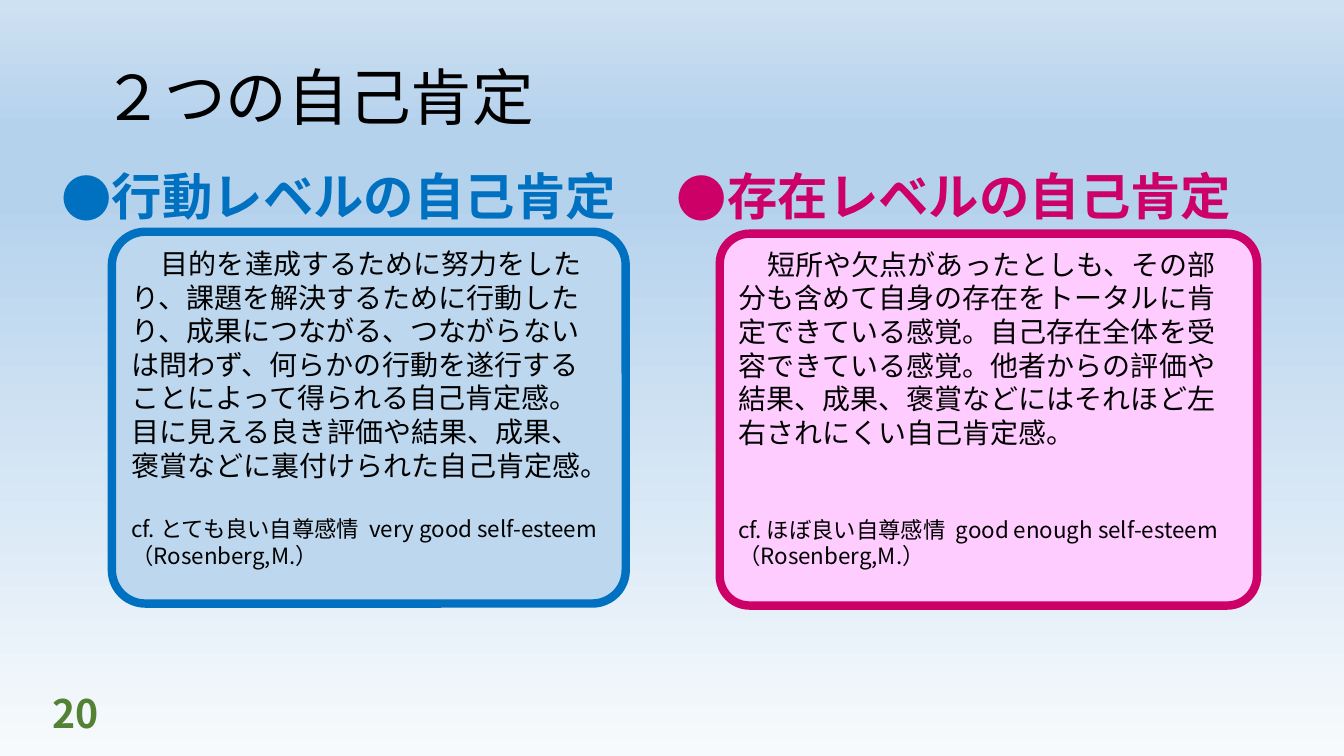
from copy import deepcopy

from lxml.etree import SubElement as Sub
from pptx import Presentation
from pptx.dml.color import RGBColor as Rgb
from pptx.enum.shapes import MSO_SHAPE as Kind
from pptx.enum.text import MSO_ANCHOR as Anchor, PP_ALIGN as Align
from pptx.oxml.ns import qn
from pptx.util import Cm, Pt

FONT = "Noto Sans CJK JP"


def tint(code):
    return Rgb.from_string(code)


def apply(item, form):
    for name, value in form.items():
        setattr(item, name, value)


class Deck:
    def __init__(self, wide, high):
        self.show = Presentation()
        apply(self.show, {"slide_width": Cm(wide), "slide_height": Cm(high)})
        self.page = self.show.slides.add_slide(self.show.slide_layouts[6])

    def back(self, stops, angle):
        fill = self.page.background.fill
        fill.gradient()
        fill.gradient_angle = angle
        group = next(self.page.element.iter(qn("a:gsLst")))
        for _ in stops[2:]:
            group.append(deepcopy(group[0]))
        for stop, (place, color) in zip(fill.gradient_stops, stops):
            stop.position = place
            stop.color.rgb = tint(color)

    def words(self, para, text, size, color="000000", bold=False, **form):
        run = para.add_run()
        run.text = text
        apply(run.font, {"name": FONT, "size": Pt(size), "bold": bold})
        run.font.color.rgb = tint(color)
        Sub(run.font._element, qn("a:ea"), typeface=FONT)
        apply(para, {"alignment": Align.LEFT, **form})

    def indent(self, para, left, first):
        props = para._p.get_or_add_pPr()
        props.set("marL", str(Cm(left)))
        props.set("indent", str(Cm(first)))
        return props

    def label(self, area, text, size, color, bold=False,
              anchor=Anchor.MIDDLE, bullet=False, **form):
        frame = self.page.shapes.add_textbox(*map(Cm, area)).text_frame
        apply(frame, {"word_wrap": True, "vertical_anchor": anchor})
        para = frame.paragraphs[0]
        if bullet:
            props = self.indent(para, 1.27, -1.27)
            Sub(props, qn("a:buFont"), typeface=FONT)
            Sub(props, qn("a:buChar"), char="●")
        self.words(para, text, size, color, bold, **form)

    def panel(self, area, curve, fill, edge, body, note, gap):
        box = self.page.shapes.add_shape(Kind.ROUNDED_RECTANGLE, *map(Cm, area))
        box.shadow.inherit = False
        box.adjustments[0] = curve
        box.fill.solid()
        box.fill.fore_color.rgb = tint(fill)
        box.line.color.rgb = tint(edge)
        box.line.width = Pt(6)
        frame = box.text_frame
        apply(frame, {"word_wrap": True, "vertical_anchor": Anchor.TOP})
        para = frame.paragraphs[0]
        self.indent(para, 0, 0.74)
        self.words(para, body, 20, line_spacing=Pt(24))
        self.words(frame.add_paragraph(), note, 16,
                   line_spacing=Pt(19), space_before=Pt(gap))


def main():
    deck = Deck(33.87, 19.05)
    deck.back([(0, "F7FAFD"), (0.74, "B5D2EC"), (0.83, "B5D2EC"),
               (1, "CEE1F2")], 90)
    deck.label((2.34, 1.02, 29.21, 3.02), "２つの自己肯定", 44, "000000",
               line_spacing=0.9)
    deck.label((1.07, 17.4, 7.62, 1.12), "20", 28, "548235", True)

    sides = [
        ("行動レベルの自己肯定", (1.3, 4.04, 14.78, 1.8), "0070C0", "BDD7EE",
         (2.82, 5.84, 12.95, 9.37), 0.09,
         "目的を達成するために努力をしたり、課題を解決するために行動したり、"
         "成果につながる、つながらないは問わず、何らかの行動を遂行することに"
         "よって得られる自己肯定感。目に見える良き評価や結果、成果、褒賞などに"
         "裏付けられた自己肯定感。",
         "cf. とても良い自尊感情  very good self-esteem（Rosenberg,M.）", 24),
        ("存在レベルの自己肯定", (16.81, 4.04, 15.44, 1.8), "CC0066", "FFCCFF",
         (18.14, 5.89, 13.54, 9.37), 0.08,
         "短所や欠点があったとしも、その部分も含めて自身の存在をトータルに"
         "肯定できている感覚。自己存在全体を受容できている感覚。他者からの"
         "評価や結果、成果、褒賞などにはそれほど左右されにくい自己肯定感。",
         "cf. ほぼ良い自尊感情  good enough self-esteem（Rosenberg,M.）", 48),
    ]
    for head, top, edge, fill, area, curve, body, note, gap in sides:
        deck.label(top, head, 36, edge, True, Anchor.TOP, True)
        deck.panel(area, curve, fill, edge, body, note, gap)
    deck.show.save("out.pptx")


if __name__ == "__main__":
    main()
